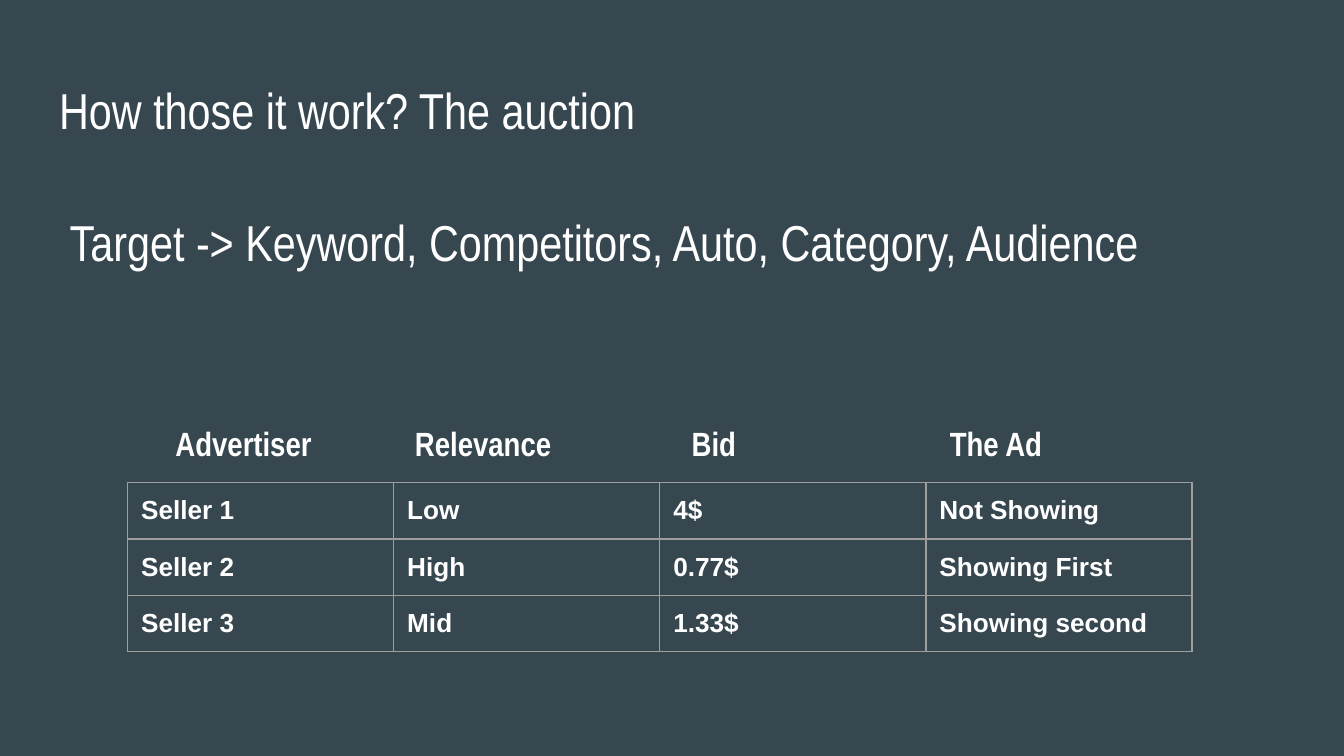
"""Build the auction slide: two headline lines above a table of sellers."""
from dataclasses import dataclass

import lxml.etree
import pptx
import pptx.dml.color
import pptx.enum.text
import pptx.oxml.ns
import pptx.util


@dataclass(frozen=True)
class Theme:
    """Colours, typefaces and sizes of the slide."""
    background: str = "37474F"
    text: str = "FFFFFF"
    border: str = "9E9E9E"
    border_width: float = 0.75
    display_font: str = "Arial Narrow"
    table_font: str = "Arial"
    headline_size: int = 27
    header_size: int = 18
    cell_size: int = 14
    inset: float = 0.1


THEME = Theme()
WIDTH = 10
HEIGHT = WIDTH * 9 / 16
HEADERS = [("Advertiser", 0.13), ("Relevance", 1.03), ("Bid", 2.07), ("The Ad", 3.04)]
SELLERS = [
    ("Seller 1", "Low", "4$", "Not Showing"),
    ("Seller 2", "High", "0.77$", "Showing First"),
    ("Seller 3", "Mid", "1.33$", "Showing second"),
]


def colour(value):
    """Return an RGB colour from its hexadecimal form."""
    return pptx.dml.color.RGBColor.from_string(value)


def set_text(frame, text, size, font, bold=False):
    """Write one left-aligned paragraph in the theme's text colour."""
    frame.text = text
    para = frame.paragraphs[0]
    para.alignment = pptx.enum.text.PP_ALIGN.LEFT
    para.font.size = pptx.util.Pt(size)
    para.font.name = font
    para.font.bold = bold
    para.font.color.rgb = colour(THEME.text)


def set_insets(target):
    """Give a text frame or a cell equal insets and anchor its text at the top."""
    for side in ("left", "right", "top", "bottom"):
        setattr(target, f"margin_{side}", pptx.util.Inches(THEME.inset))
    target.vertical_anchor = pptx.enum.text.MSO_ANCHOR.TOP


def fill_box(box, area, text, size, bold=False):
    """Place a text shape in an area and write its text."""
    box.left, box.top, box.width, box.height = map(pptx.util.Inches, area)
    frame = box.text_frame
    frame.word_wrap = True
    frame.auto_size = pptx.enum.text.MSO_AUTO_SIZE.NONE
    set_insets(frame)
    set_text(frame, text, size, THEME.display_font, bold)


def add_headlines(page, area):
    """Place the title at the top of the area and the target line below it."""
    left, top, width, height = area
    line_height = height * 0.39
    fill_box(page.shapes.title, (left, top, width, line_height),
             "How those it work? The auction", THEME.headline_size)
    target = page.shapes.add_textbox(0, 0, 0, 0)
    fill_box(target, (left + 0.08, top + height - line_height, width, line_height),
             "Target -> Keyword, Competitors, Auto, Category, Audience",
             THEME.headline_size)


def add_headers(page, area):
    """Place each column heading at its offset, counted in table columns."""
    left, top, width, height = area
    column = width / len(HEADERS)
    for text, offset in HEADERS:
        box = page.shapes.add_textbox(0, 0, 0, 0)
        fill_box(box, (left + offset * column, top, 1.5, height),
                 text, THEME.header_size, bold=True)


def set_borders(cell):
    """Draw a thin solid line on all four sides of a cell."""
    properties = cell._tc.get_or_add_tcPr()
    name = pptx.oxml.ns.qn
    for index, side in enumerate(("a:lnL", "a:lnR", "a:lnT", "a:lnB")):
        line = lxml.etree.Element(name(side), w=str(pptx.util.Pt(THEME.border_width)))
        fill = lxml.etree.SubElement(line, name("a:solidFill"))
        lxml.etree.SubElement(fill, name("a:srgbClr"), val=THEME.border)
        properties.insert(index, line)


def add_sellers(page, area):
    """Place the table of sellers on an even grid inside the area."""
    row_count, column_count = len(SELLERS), len(HEADERS)
    frame = page.shapes.add_table(row_count, column_count,
                                  *map(pptx.util.Inches, area))
    table = frame.table
    table.first_row = table.horz_banding = False
    for row, seller in enumerate(SELLERS):
        for column, text in enumerate(seller):
            cell = table.cell(row, column)
            cell.fill.background()
            set_insets(cell)
            set_text(cell.text_frame, text, THEME.cell_size, THEME.table_font, bold=True)
            set_borders(cell)


def build_auction_page(deck):
    """Add the auction slide with its headlines, headings and table."""
    page = deck.slides.add_slide(deck.slide_layouts[5])
    page.background.fill.solid()
    page.background.fill.fore_color.rgb = colour(THEME.background)
    left, width = WIDTH * 0.095, WIDTH * 0.792
    add_headlines(page, (0.34, 0.49, WIDTH * 0.932, 1.61))
    add_sellers(page, (left, 3.59, width, 0.42 * len(SELLERS)))
    add_headers(page, (left, 3.05, width, 0.5))


def main():
    """Create the deck and save it."""
    deck = pptx.Presentation()
    deck.slide_width = pptx.util.Inches(WIDTH)
    deck.slide_height = pptx.util.Inches(HEIGHT)
    build_auction_page(deck)
    deck.save("out.pptx")


if __name__ == "__main__":
    main()
